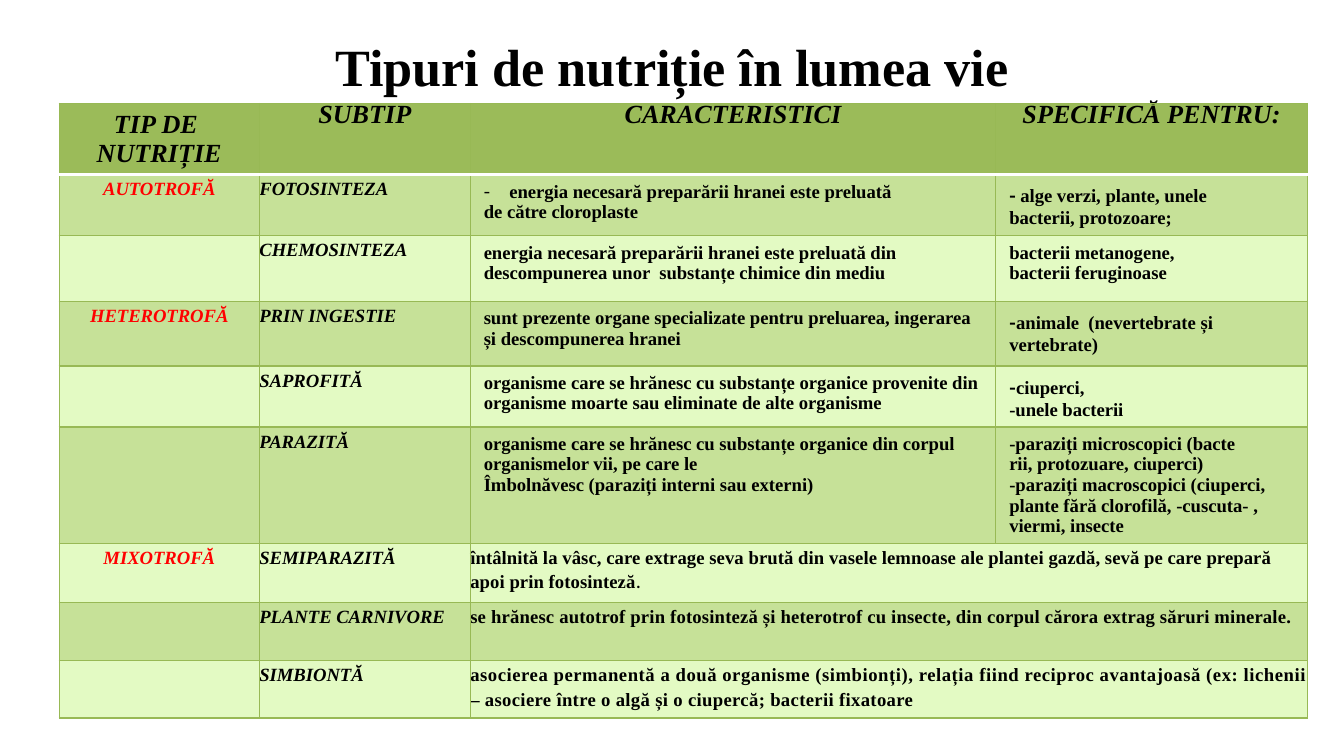
from lxml import etree
from pptx import Presentation
from pptx.dml.color import RGBColor
from pptx.enum.text import MSO_ANCHOR, PP_ALIGN
from pptx.oxml import parse_xml
from pptx.oxml.ns import nsdecls, qn
from pptx.util import Inches, Pt

COLORS = {"black": "000000", "red": "FF0000", "header": "9BBB59", "dark": "C6E198",
          "light": "E3FAC3", "border": "98B955", "white": "FFFFFF"}
FONT = "Times New Roman"
PART_FONTS = {"-": "Noto Sans CJK KR", "- ": "Noto Sans CJK KR", ".": "Calibri"}
LETTER_SPACING = {6: [6, 6], 7: [10], 8: [30, 20]}
COL_WIDTHS = [1.49, 1.57, 3.91, 2.32]
ROW_HEIGHTS = [0.53, 0.45, 0.49, 0.48, 0.45, 0.86, 0.44, 0.43, 0.43]
ROWS = [
    ["TIP DE \nNUTRIȚIE", "SUBTIP", "CARACTERISTICI", "SPECIFICĂ PENTRU:"],
    ["AUTOTROFĂ", "FOTOSINTEZA",
     "energia necesară preparării hranei este preluată\nde către cloroplaste",
     "- |alge verzi, plante, unele\nbacterii, protozoare;"],
    ["", "CHEMOSINTEZA",
     "energia necesară preparării hranei este preluată din descompunerea unor  substanțe chimice din mediu",
     "bacterii metanogene,\nbacterii feruginoase"],
    ["HETEROTROFĂ", "PRIN INGESTIE",
     "sunt prezente organe specializate pentru preluarea, ingerarea și descompunerea hranei",
     "-|animale  (nevertebrate și\nvertebrate)"],
    ["", "SAPROFITĂ",
     "organisme care se hrănesc cu substanțe organice provenite din organisme moarte sau eliminate de alte organisme",
     "-|ciuperci,\n-unele bacterii"],
    ["", "PARAZITĂ",
     "organisme care se hrănesc cu substanțe organice din corpul organismelor vii, pe care le\n"
     "Îmbolnăvesc (paraziți interni sau externi)",
     "-paraziți microscopici (bacte\nrii, protozuare, ciuperci)\n"
     "-paraziți macroscopici (ciuperci, plante fără clorofilă, -cuscuta- , viermi, insecte"],
    ["MIXOTROFĂ", "SEMIPARAZITĂ",
     "întâlnită la vâsc, care extrage seva brută din vasele lemnoase ale plantei gazdă, "
     "sevă pe care prepară apoi prin fotosinteză|."],
    ["", "PLANTE CARNIVORE",
     "se hrănesc autotrof prin fotosinteză și heterotrof cu insecte, din corpul cărora extrag săruri minerale."],
    ["", "SIMBIONTĂ",
     "asocierea permanentă a două organisme (simbionți), relația fiind reciproc avantajoasă (ex: lichenii |"
     "– asociere între o algă și o ciupercă; bacterii fixatoare"],
]


def style_font(font, size, color, name=FONT, bold=True, italic=False):
    font.name = name
    font.size = Pt(size)
    font.bold = bold
    font.italic = italic
    font.color.rgb = RGBColor.from_string(COLORS[color])


def add_borders(cell, row):
    tcPr = cell._tc.get_or_add_tcPr()
    for i, side in enumerate(["lnL", "lnR", "lnT", "lnB"]):
        heavy = (row, side) in [(0, "lnB"), (1, "lnT")]
        color, width = ("white", 2) if heavy else ("border", 0.75)
        tcPr.insert(i, parse_xml(
            f'<a:{side} {nsdecls("a")} w="{Pt(width)}"><a:solidFill>'
            f'<a:srgbClr val="{COLORS[color]}"/></a:solidFill></a:{side}>'))


prs = Presentation()
prs.slide_width = Inches(10)
prs.slide_height = Inches(10 * 9 / 16)
slide = prs.slides.add_slide(prs.slide_layouts[5])

title = slide.shapes.title
title.left, title.top = Inches(0), Inches(0)
title.width, title.height = Inches(10), Inches(0.97)
title.text_frame.text = "Tipuri de nutriție în lumea vie"
title.text_frame.vertical_anchor = MSO_ANCHOR.MIDDLE
p = title.text_frame.paragraphs[0]
p.alignment = PP_ALIGN.CENTER
style_font(p.runs[0].font, 28, "black")

frame = slide.shapes.add_table(len(ROWS), len(COL_WIDTHS), Inches(0.44), Inches(0.77),
                               Inches(sum(COL_WIDTHS)), Inches(sum(ROW_HEIGHTS)))
table = frame.table
table.horz_banding = False
for column, width in zip(table.columns, COL_WIDTHS):
    column.width = Inches(width)
for row, height in zip(table.rows, ROW_HEIGHTS):
    row.height = Inches(height)

for r, texts in enumerate(ROWS):
    if len(texts) == 3:
        table.cell(r, 2).merge(table.cell(r, 3))
    for c in range(len(COL_WIDTHS)):
        cell = table.cell(r, c)
        cell.fill.solid()
        fill = "header" if r == 0 else "dark" if r % 2 else "light"
        cell.fill.fore_color.rgb = RGBColor.from_string(COLORS[fill])
        add_borders(cell, r)
        if c >= len(texts) or not texts[c]:
            continue
        tight = (r, c) != (0, 0) and (r == 0 or c < 2 or len(texts) == 3)
        if tight:
            cell.margin_left = cell.margin_right = cell.margin_top = cell.margin_bottom = 0
        tf = cell.text_frame
        tf.text = texts[c].replace("|", "")
        for p, line in zip(tf.paragraphs, texts[c].split("\n")):
            if "|" in line:
                p.text = ""
                for part in line.split("|"):
                    p.add_run().text = part
            if r == 0 or c == 0:
                p.alignment = PP_ALIGN.CENTER
            if tight:
                p.line_spacing = Pt(13.5)
            for run in p.runs:
                name = PART_FONTS.get(run.text, FONT)
                size = 14 if r == 0 else 11 if run.text == "." else 10
                color = "red" if r and c == 0 else "black"
                style_font(run.font, size, color, name, run.text != ".", r == 0 or c < 2)

for r, spacings in LETTER_SPACING.items():
    for run, spacing in zip(table.cell(r, 2).text_frame.paragraphs[0].runs, spacings):
        run._r.get_or_add_rPr().set("spc", str(spacing))
table.cell(6, 2).margin_right = Inches(0.1)

pPr = table.cell(1, 2).text_frame.paragraphs[0]._p.get_or_add_pPr()
pPr.set("marL", str(Inches(0.19)))
pPr.set("indent", str(-Inches(0.19)))
etree.SubElement(pPr, qn("a:buFont")).set("typeface", FONT)
etree.SubElement(pPr, qn("a:buChar")).set("char", "-")

prs.save("out.pptx")
